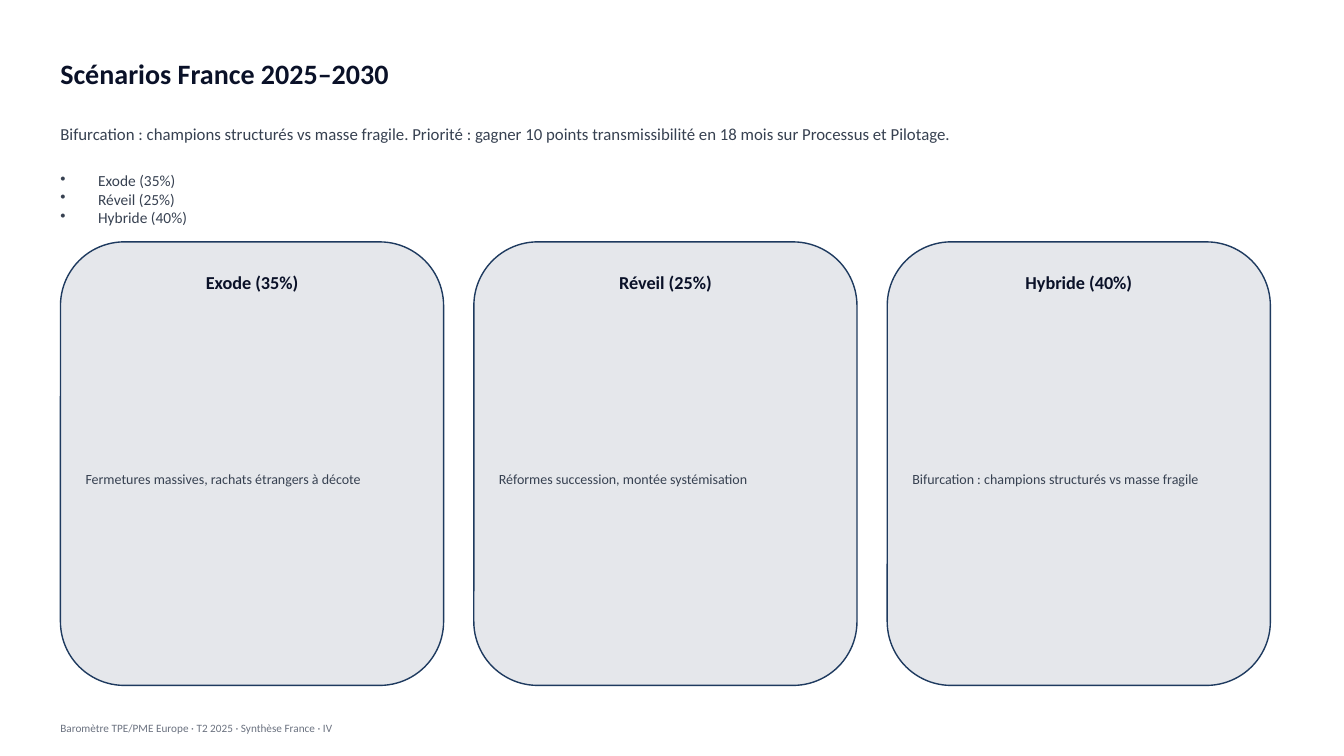
import pptx
import pptx.util
import pptx.dml.color
import pptx.enum.shapes
import pptx.enum.text
import lxml.etree
from pptx.util import Inches

COLORS = {"ink": "0A1128", "body": "374151", "muted": "6B7280",
          "card": "E5E7EB", "border": "1E3A5F"}
MARGIN, WIDTH = 0.5, 12.3
CARD_LEFT, CARD_TOP, CARD_W, CARD_H, GAP = 0.6, 2.4, 3.8, 4.4, 0.3
PAD = 0.15
INDENT = Inches(0.375)
SCENARIOS = [
    ("Exode (35%)", "Fermetures massives, rachats étrangers à décote"),
    ("Réveil (25%)", "Réformes succession, montée systémisation"),
    ("Hybride (40%)", "Bifurcation : champions structurés vs masse fragile"),
]


def rgb(name):
    return pptx.dml.color.RGBColor.from_string(COLORS[name])


def add_text(s, box, lines, size, color, bold=False, center=False, bullet=False):
    tf = s.shapes.add_textbox(*[Inches(v) for v in box]).text_frame
    tf.word_wrap = True
    tf.vertical_anchor = pptx.enum.text.MSO_ANCHOR.MIDDLE
    for i, line in enumerate(lines):
        p = tf.add_paragraph() if i else tf.paragraphs[0]
        if center:
            p.alignment = pptx.enum.text.PP_ALIGN.CENTER
        if bullet:
            pPr = p._p.get_or_add_pPr()
            pPr.set("marL", str(INDENT))
            pPr.set("indent", str(-INDENT))
            bu = lxml.etree.SubElement(pPr, pptx.oxml.ns.qn("a:buChar"))
            bu.set("char", "•")
        r = p.add_run()
        r.text = line
        r.font.name = "Calibri"
        r.font.size = pptx.util.Pt(size)
        r.font.bold = bold
        r.font.color.rgb = rgb(color)


prs = pptx.Presentation()
prs.slide_width, prs.slide_height = Inches(13.33), Inches(7.5)
s = prs.slides.add_slide(prs.slide_layouts[6])

add_text(s, (MARGIN, 0.4, WIDTH, 0.65), ["Scénarios France 2025–2030"], 20, "ink", bold=True)
add_text(s, (MARGIN, 1.05, WIDTH, 0.55),
         ["Bifurcation : champions structurés vs masse fragile. "
          "Priorité : gagner 10 points transmissibilité en 18 mois sur Processus et Pilotage."],
         12, "body")
add_text(s, (MARGIN, 1.55, WIDTH, 0.85), [name for name, _ in SCENARIOS], 11, "body", bullet=True)

for col, (name, summary) in enumerate(SCENARIOS):
    x = CARD_LEFT + col * (CARD_W + GAP)
    sp = s.shapes.add_shape(pptx.enum.shapes.MSO_SHAPE.ROUNDED_RECTANGLE,
                            Inches(x), Inches(CARD_TOP), Inches(CARD_W), Inches(CARD_H))
    sp.shadow.inherit = False
    sp.fill.solid()
    sp.fill.fore_color.rgb = rgb("card")
    sp.line.color.rgb = rgb("border")
    sp.line.width = pptx.util.Pt(1)
    add_text(s, (x, CARD_TOP + PAD, CARD_W, 0.5), [name], 13, "ink", bold=True, center=True)
    add_text(s, (x + PAD, CARD_TOP + 5 * PAD, CARD_W - 2 * PAD, 3.2), [summary], 10, "body")

add_text(s, (MARGIN, 7.05, WIDTH, 0.35),
         ["Baromètre TPE/PME Europe · T2 2025 · Synthèse France · IV"], 8, "muted")

prs.save("out.pptx")
